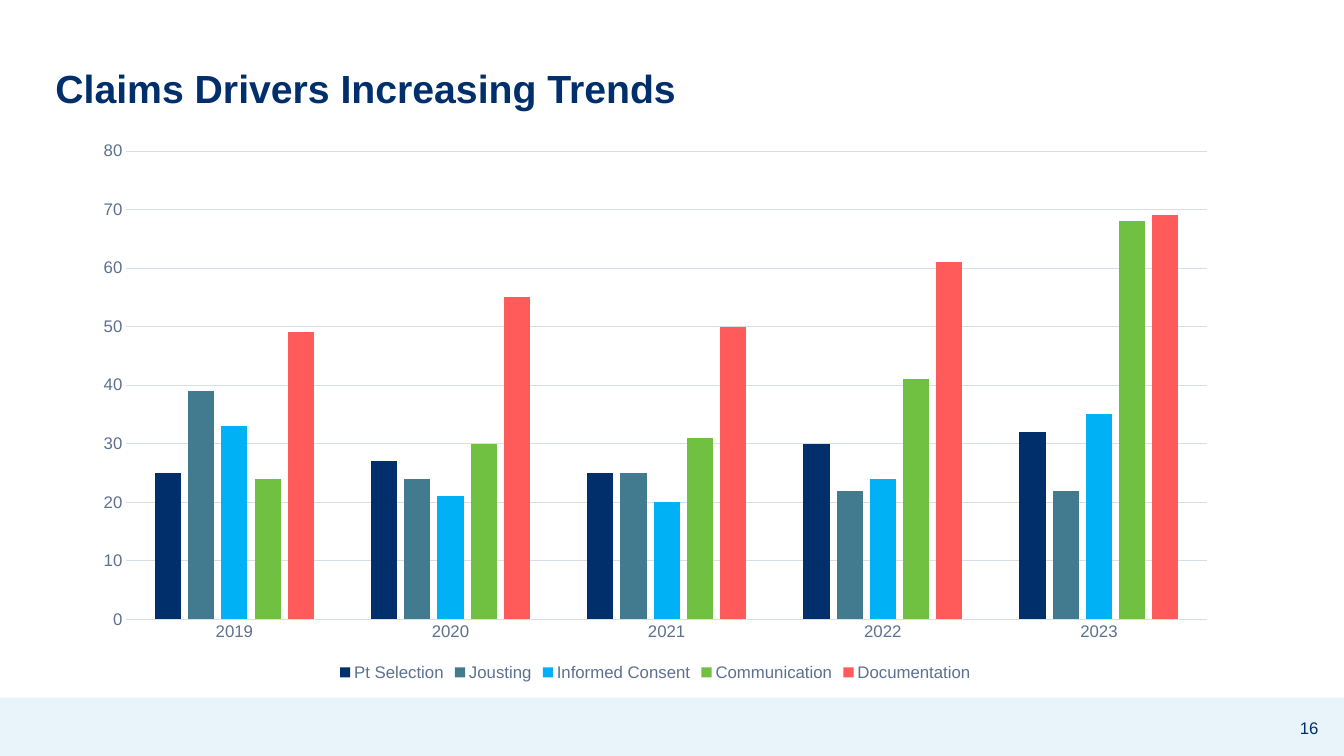
from dataclasses import dataclass

from pptx import Presentation
from pptx.chart.data import CategoryChartData
from pptx.dml.color import RGBColor
from pptx.enum.chart import XL_CHART_TYPE as ChartType
from pptx.enum.chart import XL_LEGEND_POSITION as LegendPos
from pptx.enum.chart import XL_TICK_MARK as Tick
from pptx.enum.shapes import MSO_SHAPE as Shape
from pptx.enum.text import MSO_ANCHOR as Anchor
from pptx.enum.text import MSO_AUTO_SIZE as AutoSize
from pptx.enum.text import PP_ALIGN as Align
from pptx.util import Pt

PX = 9144


@dataclass(frozen=True)
class Theme:
    font: str = "Arial"
    navy: str = "002F6B"
    label: str = "5C718F"
    grid: str = "D8DEE6"
    band: str = "E8F4FA"
    series: tuple = ("002F6B", "427B8F", "00B2F5", "70C141", "FF5B5B")
    title_size: int = 28
    small_size: int = 12
    line_width: float = 0.75


YEARS = ("2019", "2020", "2021", "2022", "2023")
DRIVERS = {
    "Pt Selection": (25, 27, 25, 30, 32),
    "Jousting": (39, 24, 25, 22, 22),
    "Informed Consent": (33, 21, 20, 24, 35),
    "Communication": (24, 30, 31, 41, 68),
    "Documentation": (49, 55, 50, 61, 69),
}


class SlideBuilder:
    def __init__(self, prs, theme):
        self.theme = theme
        self.s = prs.slides.add_slide(prs.slide_layouts[5])

    def box(self, *lengths):
        return [n * PX for n in lengths]

    def style(self, font, size, color, bold=False):
        font.name = self.theme.font
        font.size = Pt(size)
        font.bold = bold
        font.color.rgb = RGBColor.from_string(color)

    def rule(self, line):
        line.color.rgb = RGBColor.from_string(self.theme.grid)
        line.width = Pt(self.theme.line_width)

    def band(self, x, y, w, h):
        sp = self.s.shapes.add_shape(Shape.RECTANGLE, *self.box(x, y, w, h))
        sp.shadow.inherit = False
        sp.fill.solid()
        sp.fill.fore_color.rgb = RGBColor.from_string(self.theme.band)
        sp.line.fill.background()

    def title(self, text, x, y, w, h):
        sp = self.s.shapes.title
        sp.left, sp.top, sp.width, sp.height = self.box(x, y, w, h)
        tf = sp.text_frame
        tf.text = text
        tf.auto_size = AutoSize.NONE
        tf.vertical_anchor = Anchor.MIDDLE
        p = tf.paragraphs[0]
        p.alignment = Align.LEFT
        p.line_spacing = 0.9
        self.style(p.runs[0].font, self.theme.title_size, self.theme.navy, True)

    def page_number(self, text, x, y, w, h):
        tf = self.s.shapes.add_textbox(*self.box(x, y, w, h)).text_frame
        tf.word_wrap = True
        tf.vertical_anchor = Anchor.MIDDLE
        tf.text = text
        p = tf.paragraphs[0]
        p.alignment = Align.CENTER
        self.style(p.runs[0].font, self.theme.small_size, self.theme.navy)

    def column_chart(self, categories, series, x, y, w, h):
        t = self.theme
        data = CategoryChartData()
        data.categories = categories
        for name, values in series.items():
            data.add_series(name, values)
        chart = self.s.shapes.add_chart(
            ChartType.COLUMN_CLUSTERED, *self.box(x, y, w, h), data
        ).chart
        chart.has_title = False
        self.style(chart.font, t.small_size, t.label)

        plot = chart.plots[0]
        plot.gap_width = 219
        plot.overlap = -27
        plot.vary_by_categories = False
        for ser, color in zip(plot.series, t.series):
            ser.format.fill.solid()
            ser.format.fill.fore_color.rgb = RGBColor.from_string(color)
            ser.invert_if_negative = False

        for axis in (chart.category_axis, chart.value_axis):
            axis.major_tick_mark = axis.minor_tick_mark = Tick.NONE
            self.style(axis.tick_labels.font, t.small_size, t.label)
        self.rule(chart.category_axis.format.line)
        values = chart.value_axis
        values.minimum_scale, values.maximum_scale, values.major_unit = 0, 80, 10
        values.format.line.fill.background()
        values.has_major_gridlines = True
        self.rule(values.major_gridlines.format.line)

        chart.has_legend = True
        chart.legend.position = LegendPos.BOTTOM
        chart.legend.include_in_layout = False
        self.style(chart.legend.font, t.small_size, t.label)


def main():
    prs = Presentation()
    prs.slide_width, prs.slide_height = 1333 * PX, 750 * PX
    slide = SlideBuilder(prs, Theme())
    slide.band(0, 692, 1333, 58)
    slide.title("Claims Drivers Increasing Trends", 45, 51, 1209, 78)
    slide.page_number("16", 1268, 702, 61, 40)
    slide.column_chart(YEARS, DRIVERS, 80, 130, 1140, 550)
    prs.save("out.pptx")


if __name__ == "__main__":
    main()
